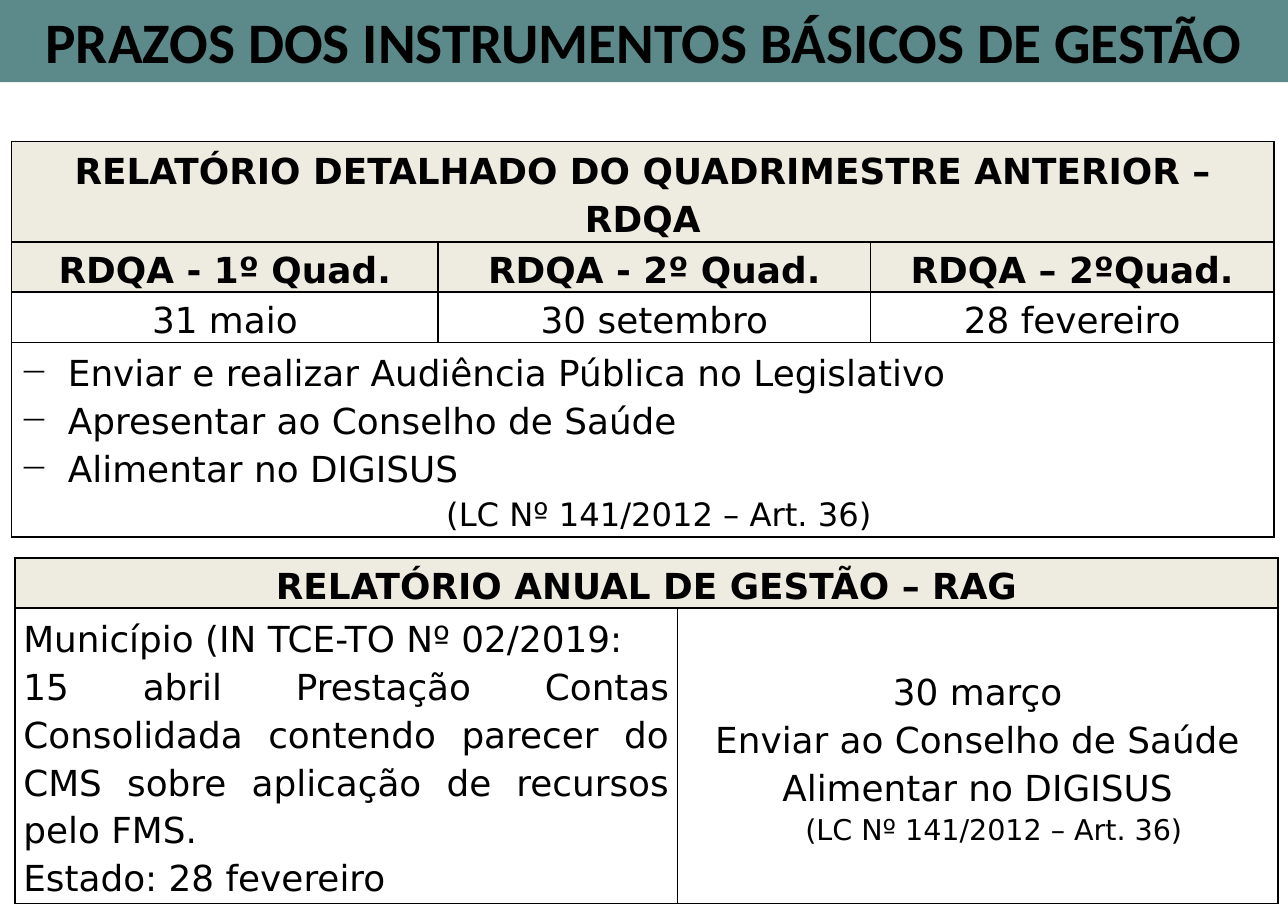
import dataclasses

import lxml.etree
import pptx
import pptx.dml.color
import pptx.enum.shapes
import pptx.enum.text
import pptx.oxml.ns
import pptx.util

Cm, Pt = pptx.util.Cm, pptx.util.Pt
ALIGN = pptx.enum.text.PP_ALIGN
MIDDLE = pptx.enum.text.MSO_ANCHOR.MIDDLE
qn = pptx.oxml.ns.qn


@dataclasses.dataclass(frozen=True)
class Theme:
    banner: str = "5C8A8A"
    header: str = "EEECE1"
    ink: str = "000000"
    title_font: str = "Calibri"
    body_font: str = "DejaVu Sans"
    title_size: int = 32
    body_size: int = 20
    note_size: int = 18
    small_note_size: int = 16


@dataclasses.dataclass(frozen=True)
class Line:
    """One paragraph of a table cell."""
    text: str
    align: ALIGN = ALIGN.CENTER
    size: int = Theme.body_size
    indent: float = 0
    bullet: str = ""


@dataclasses.dataclass(frozen=True)
class Cell:
    lines: list
    header: bool = False
    span: int = 1


class Deck:
    def __init__(self, theme, width, height):
        self.theme = theme
        self.prs = pptx.Presentation()
        self.prs.slide_width, self.prs.slide_height = width, height
        self.s = self.prs.slides.add_slide(self.prs.slide_layouts[6])

    def rgb(self, name):
        return pptx.dml.color.RGBColor.from_string(name)

    def run(self, p, text, font, size, bold):
        r = p.add_run()
        r.text = text
        r.font.name, r.font.size, r.font.bold = font, Pt(size), bold
        r.font.color.rgb = self.rgb(self.theme.ink)

    def banner(self, text, height):
        sp = self.s.shapes.add_shape(
            pptx.enum.shapes.MSO_SHAPE.RECTANGLE, 0, 0, self.prs.slide_width, height)
        sp.shadow.inherit = False
        sp.fill.solid()
        sp.fill.fore_color.rgb = self.rgb(self.theme.banner)
        sp.line.fill.background()
        tf = sp.text_frame
        tf.word_wrap, tf.vertical_anchor = True, MIDDLE
        p = tf.paragraphs[0]
        p.alignment = ALIGN.CENTER
        self.run(p, text, self.theme.title_font, self.theme.title_size, True)

    def table(self, left, top, widths, heights, rows):
        frame = self.s.shapes.add_table(
            len(heights), len(widths), left, top, sum(widths), sum(heights))
        tbl = frame.table
        for column, width in zip(tbl.columns, widths):
            column.width = width
        for row, height in zip(tbl.rows, heights):
            row.height = height
        for i, cells in enumerate(rows):
            for j, content in enumerate(cells):
                if content.span > 1:
                    tbl.cell(i, j).merge(tbl.cell(i, j + content.span - 1))
                self.fill_cell(tbl.cell(i, j), content)
        for cell in tbl.iter_cells():
            if cell.is_spanned:
                cell.fill.background()
            self.borders(cell)

    def fill_cell(self, cell, content):
        cell.vertical_anchor = MIDDLE
        cell.margin_left = cell.margin_right = Cm(0.16)
        cell.margin_top, cell.margin_bottom = Cm(0.03), 0
        if content.header:
            cell.fill.solid()
            cell.fill.fore_color.rgb = self.rgb(self.theme.header)
        else:
            cell.fill.background()
        tf = cell.text_frame
        for k, line in enumerate(content.lines):
            p = tf.add_paragraph() if k else tf.paragraphs[0]
            self.paragraph(p, line, content.header)

    def paragraph(self, p, line, bold):
        p.alignment, p.line_spacing = line.align, 1.15
        pPr = p._p.get_or_add_pPr()
        if line.indent:
            pPr.set("marL", str(Cm(line.indent)))
            pPr.set("indent", str(-Cm(line.indent) if line.bullet else 0))
        if line.bullet:
            lxml.etree.SubElement(pPr, qn("a:buChar")).set("char", line.bullet)
        self.run(p, line.text, self.theme.body_font, line.size, bold)

    def borders(self, cell):
        tcPr = cell._tc.get_or_add_tcPr()
        for i, side in enumerate("LRTB"):
            ln = lxml.etree.Element(qn("a:ln" + side), w=str(Pt(1)))
            fill = lxml.etree.SubElement(ln, qn("a:solidFill"))
            lxml.etree.SubElement(fill, qn("a:srgbClr")).set("val", self.theme.ink)
            tcPr.insert(i, ln)


def main():
    theme = Theme()
    deck = Deck(theme, Cm(25.4), Cm(17.98))
    law = "(LC Nº 141/2012 – Art. 36)"

    # Title banner
    deck.banner("PRAZOS DOS INSTRUMENTOS BÁSICOS DE GESTÃO", Cm(1.62))

    # Four-month report
    quarters = ["RDQA - 1º Quad.", "RDQA - 2º Quad.", "RDQA – 2ºQuad."]
    dates = ["31 maio", "30 setembro", "28 fevereiro"]
    tasks = ["Enviar e realizar Audiência Pública no Legislativo",
             "Apresentar ao Conselho de Saúde",
             "Alimentar no DIGISUS"]
    steps = [Line(t, ALIGN.JUSTIFY, indent=0.95, bullet="−") for t in tasks]
    steps.append(Line(law, size=theme.note_size, indent=0.64))
    deck.table(
        Cm(0.23), Cm(2.79),
        [Cm(8.41), Cm(8.53), Cm(7.95)],
        [Cm(1.98), Cm(0.99), Cm(0.99), Cm(3.84)],
        [[Cell([Line("RELATÓRIO DETALHADO DO QUADRIMESTRE ANTERIOR – RDQA")], True, 3)],
         [Cell([Line(q)], True) for q in quarters],
         [Cell([Line(d)]) for d in dates],
         [Cell(steps, span=3)]])

    # Annual management report
    town = ["Município (IN TCE-TO Nº 02/2019:",
            "15 abril Prestação Contas Consolidada contendo parecer do CMS "
            "sobre aplicação de recursos pelo FMS.",
            "Estado: 28 fevereiro"]
    council = ["30 março", "Enviar ao Conselho de Saúde", "Alimentar no DIGISUS"]
    deck.table(
        Cm(0.3), Cm(11),
        [Cm(13.06), Cm(11.84)],
        [Cm(0.99), Cm(5.82)],
        [[Cell([Line("RELATÓRIO ANUAL DE GESTÃO – RAG")], True, 2)],
         [Cell([Line(t, ALIGN.JUSTIFY) for t in town]),
          Cell([Line(t) for t in council]
               + [Line(law, size=theme.small_note_size, indent=0.64)])]])

    deck.prs.save("out.pptx")


if __name__ == "__main__":
    main()
